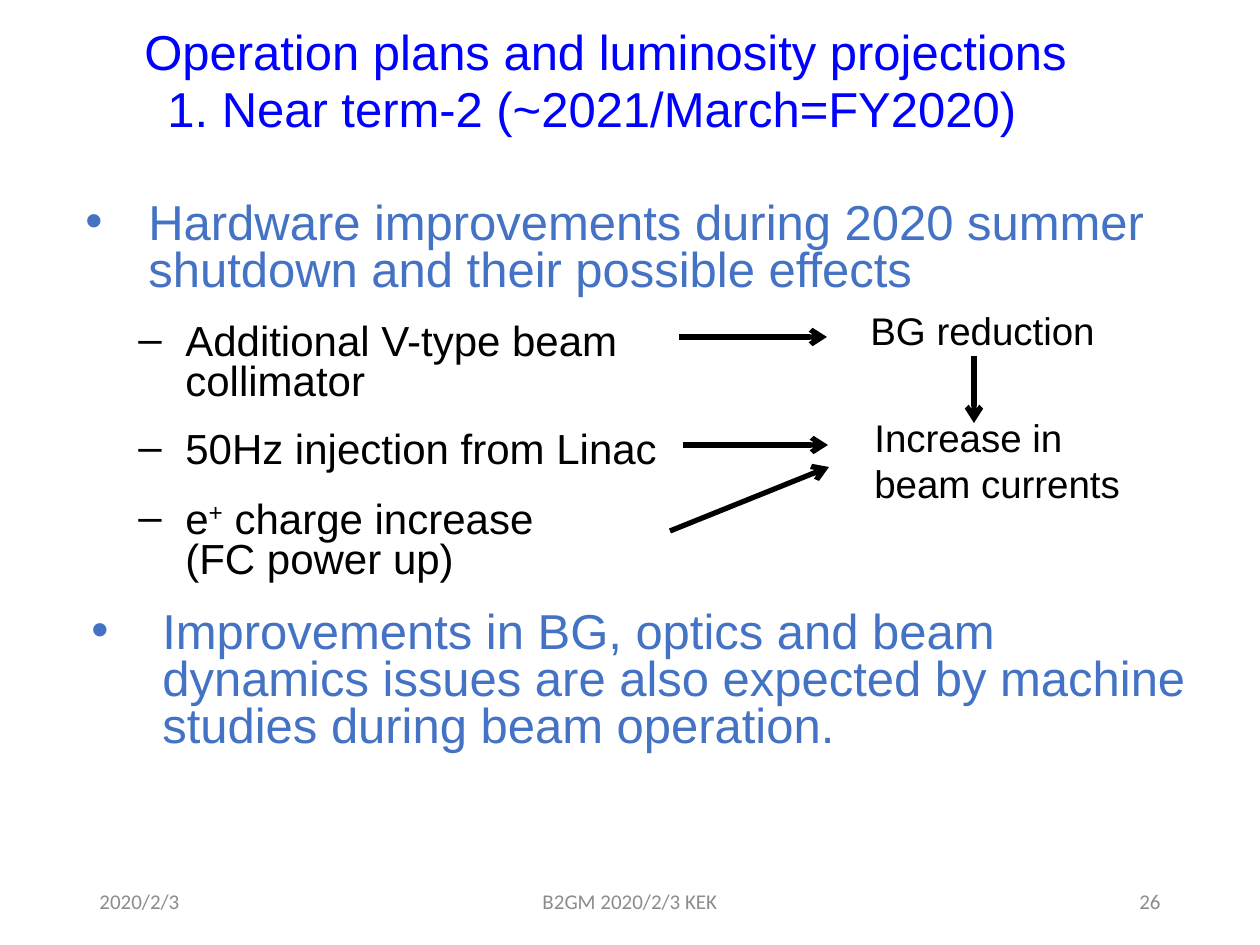
import dataclasses

import lxml.etree
import pptx
import pptx.dml.color
import pptx.enum.shapes
import pptx.enum.text
import pptx.oxml.ns
import pptx.util

EMU_PER_PX = 914400 / 126
ALIGN = pptx.enum.text.PP_ALIGN
ANCHOR = pptx.enum.text.MSO_ANCHOR


def style(name, size, color):
    return {"name": name, "size": pptx.util.Pt(size),
            "color": pptx.dml.color.RGBColor.from_string(color)}


@dataclasses.dataclass(frozen=True)
class Theme:
    title = style("Arial", 28, "0000FF")
    topic = style("Arial", 28, "4472C4")
    item = style("Arial", 24, "000000")
    effect = style("Arial", 22, "000000")
    footer = style("Calibri", 12, "8C8C8C")
    arrow_color = pptx.dml.color.RGBColor(0, 0, 0)
    arrow_width = pptx.util.Pt(3)
    tight_spacing = 0.8


THEME = Theme()


def px(length):
    return pptx.util.Emu(round(length * EMU_PER_PX))


def add_element(parent, tag, **attributes):
    return lxml.etree.SubElement(parent, pptx.oxml.ns.qn(tag), attributes)


def add_box(slide, box, wrap=True, anchor=ANCHOR.TOP):
    frame = slide.shapes.add_textbox(*map(px, box)).text_frame
    frame.word_wrap = wrap
    frame.vertical_anchor = anchor
    return frame


def add_run(paragraph, text, text_style):
    run = paragraph.add_run()
    run.text = text
    for name, value in text_style.items():
        if name == "color":
            run.font.color.rgb = value
        else:
            setattr(run.font, name, value)
    return run


def add_text(slide, box, text, text_style, align=ALIGN.LEFT, **box_format):
    paragraph = add_box(slide, box, **box_format).paragraphs[0]
    paragraph.alignment = align
    add_run(paragraph, text, text_style)


def format_list_paragraph(paragraph, indent, bullet=None, space_before=0):
    """Set a tight paragraph with a hanging bullet, or an indented one without."""
    paragraph.line_spacing = THEME.tight_spacing
    paragraph.space_before = pptx.util.Pt(space_before)
    properties = paragraph._p.get_or_add_pPr()
    properties.set("marL", str(px(indent)))
    properties.set("indent", str(-px(indent) if bullet else 0))
    if bullet:
        add_element(properties, "a:buFont", typeface="Arial")
        add_element(properties, "a:buChar", char=bullet)
    else:
        add_element(properties, "a:buNone")


def add_bullet(slide, box, text, text_style, bullet, indent):
    frame = add_box(slide, box)
    format_list_paragraph(frame.paragraphs[0], indent, bullet)
    add_run(frame.paragraphs[0], text, text_style)
    return frame


def add_charge_item(frame, bullet, indent):
    """Add the positron item, with its superscript, and the line below it."""
    charge = frame.add_paragraph()
    format_list_paragraph(charge, indent, bullet, space_before=17)
    add_run(charge, "e", THEME.item)
    superscript = add_run(charge, "+", THEME.item)
    superscript._r.get_or_add_rPr().set("baseline", "30000")
    add_run(charge, " charge increase", THEME.item)
    power = frame.add_paragraph()
    format_list_paragraph(power, indent)
    add_run(power, "(FC power up)", THEME.item)


def add_arrow(slide, *ends):
    connector = slide.shapes.add_connector(
        pptx.enum.shapes.MSO_CONNECTOR.STRAIGHT, *map(px, ends))
    connector.line.color.rgb = THEME.arrow_color
    connector.line.width = THEME.arrow_width
    add_element(connector.line._get_or_add_ln(), "a:tailEnd", type="arrow")
    add_element(connector._element.spPr, "a:effectLst")


def main():
    presentation = pptx.Presentation()
    presentation.slide_width, presentation.slide_height = px(1260), px(945)
    slide = presentation.slides.add_slide(presentation.slide_layouts[6])

    add_text(slide, (132, 15, 964, 72),
             "Operation plans and luminosity projections", THEME.title)
    add_text(slide, (155, 72, 916, 72),
             "1. Near term-2 (~2021/March=FY2020)", THEME.title)

    add_bullet(slide, (73, 197, 1149, 107),
               "Hardware improvements during 2020 summer shutdown and their possible effects",
               THEME.topic, "•", 63)
    add_bullet(slide, (126, 318, 595, 94), "Additional V-type beam collimator",
               THEME.item, "‒", 47)
    items = add_bullet(slide, (126, 426, 595, 165), "50Hz injection from Linac",
                       THEME.item, "‒", 47)
    add_charge_item(items, "‒", 47)
    add_bullet(slide, (79, 606, 1147, 155),
               "Improvements in BG, optics and beam dynamics issues are also "
               "expected by machine studies during beam operation.",
               THEME.topic, "•", 71)

    add_text(slide, (858, 301, 252, 59), "BG reduction", THEME.effect, wrap=False)
    add_text(slide, (862, 408, 312, 106), "Increase in beam currents", THEME.effect)
    for ends in ((679, 337, 827, 337), (683, 445, 828, 445),
                 (670, 531, 829, 467), (974, 356, 974, 423)):
        add_arrow(slide, *ends)

    for left, width, text, align in (
            (87, 284, "2020/2/3", ALIGN.LEFT),
            (417, 426, "B2GM 2020/2/3 KEK", ALIGN.CENTER),
            (890, 283, "26", ALIGN.RIGHT)):
        add_text(slide, (left, 876, width, 50), text, THEME.footer, align,
                 anchor=ANCHOR.MIDDLE)

    presentation.save("out.pptx")


if __name__ == "__main__":
    main()
